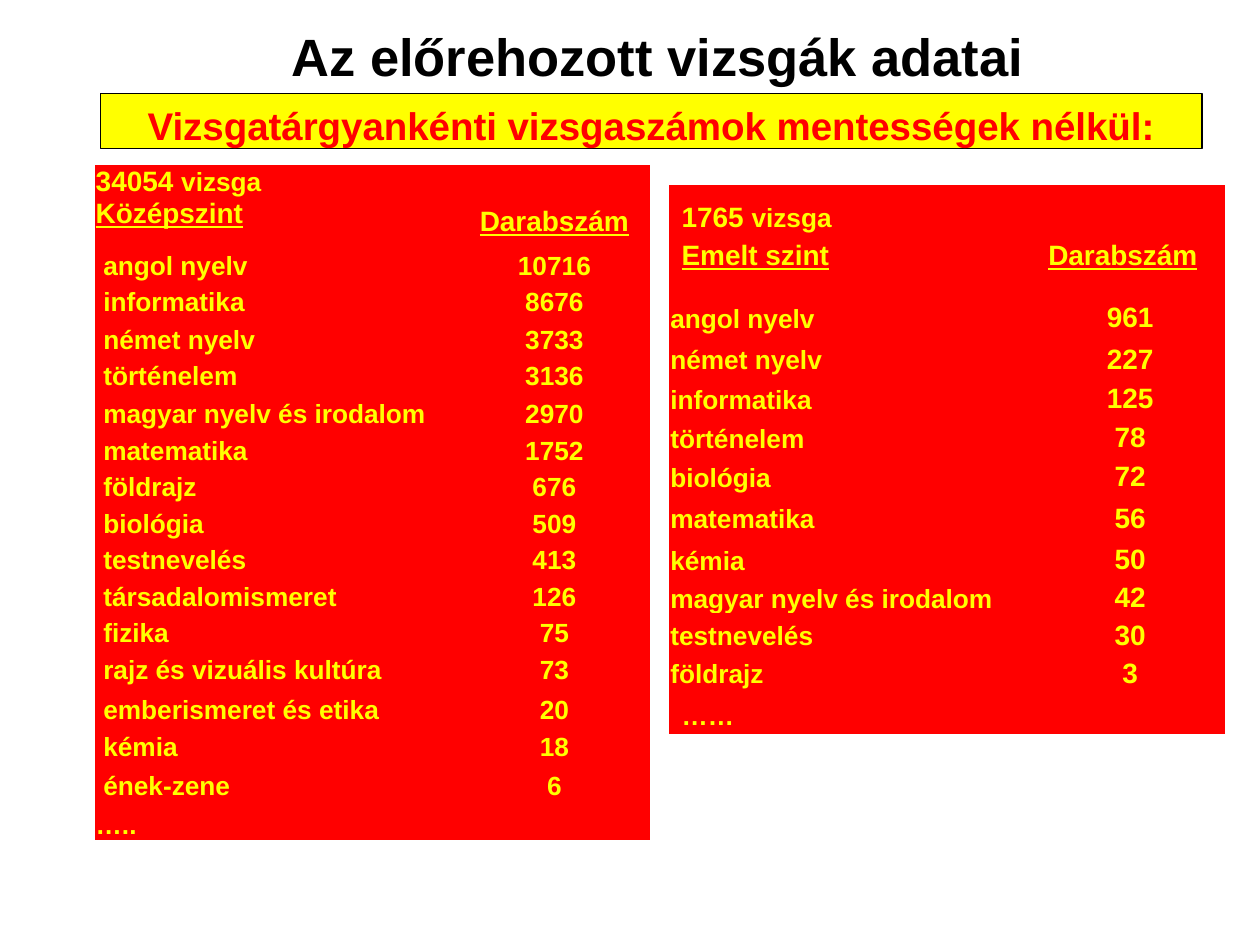
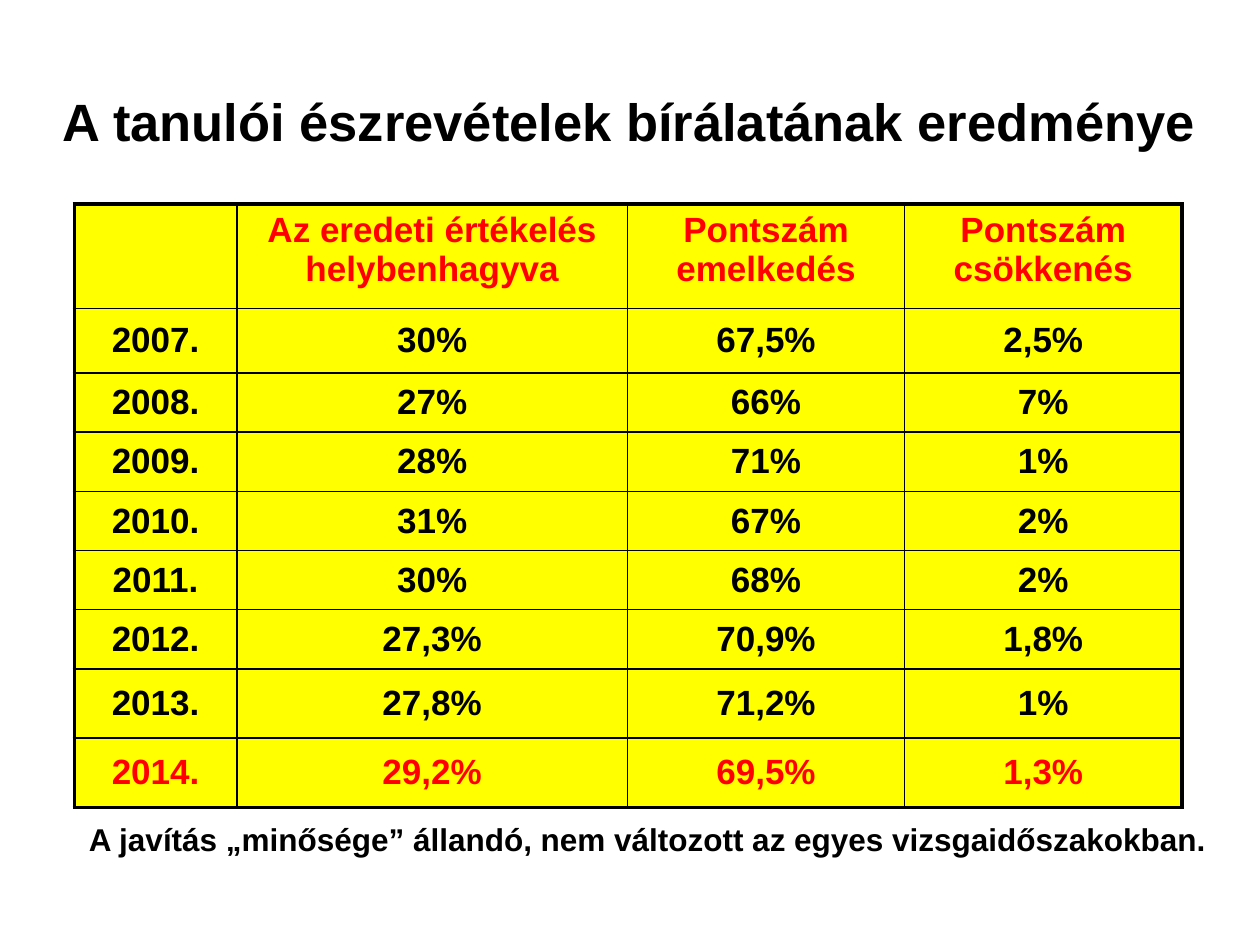
from dataclasses import dataclass

from lxml import etree
from pptx import Presentation
from pptx.dml.color import RGBColor
from pptx.enum.shapes import MSO_SHAPE
from pptx.enum.text import MSO_ANCHOR, MSO_AUTO_SIZE, PP_ALIGN
from pptx.oxml.ns import qn
from pptx.util import Inches, Pt

LEFT, CENTER = PP_ALIGN.LEFT, PP_ALIGN.CENTER
TOP, MIDDLE, BOTTOM = MSO_ANCHOR.TOP, MSO_ANCHOR.MIDDLE, MSO_ANCHOR.BOTTOM
RECTANGLE = MSO_SHAPE.RECTANGLE
NO_AUTOFIT = MSO_AUTO_SIZE.NONE
TITLE_ONLY = 5
PLAIN_TABLE = "{2D5ABB26-0587-4C30-8999-92F81FD0307C}"
GRID_COLS, GRID_ROWS = 100, 75


@dataclass(frozen=True)
class Theme:
    font: str = "Arial"
    black: str = "000000"
    red: str = "FF0000"
    yellow: str = "FFFF00"
    title: int = 30
    band: int = 22
    grid: int = 20
    caption: int = 18
    count: int = 16
    subject: int = 15
    thin: float = 1
    thick: float = 2.25
    outline: float = 0.75


THEME = Theme()
TIGHT = dict(margin_left=Inches(0.01), margin_right=Inches(0.01),
             margin_top=Inches(0.01), margin_bottom=0)
INSET = {**TIGHT, "margin_left": Inches(0.07)}


def apply(target, values):
    for name, value in values.items():
        setattr(target, name, value)


def rgb(color):
    return RGBColor.from_string(color)


class Deck:
    """Builds slides on a grid of 100 columns and 75 rows."""

    def __init__(self, theme):
        self.theme = theme
        self.prs = Presentation()
        self.prs.slide_width, self.prs.slide_height = Inches(10), Inches(7.5)
        self.col = self.prs.slide_width / GRID_COLS
        self.row = self.prs.slide_height / GRID_ROWS
        self.slide = None

    def box(self, left, top, width, height):
        return (round(left * self.col), round(top * self.row),
                round(width * self.col), round(height * self.row))

    def fill_text(self, tf, paragraphs, size, color, **para):
        """Fill a frame; a paragraph is a string or a list of (text, font values)."""
        for i, runs in enumerate(paragraphs):
            p = tf.paragraphs[0] if i == 0 else tf.add_paragraph()
            apply(p, para)
            for text, values in [(runs, {})] if isinstance(runs, str) else runs:
                r = p.add_run()
                r.text = text
                apply(r.font, dict(name=self.theme.font, size=Pt(size), bold=True) | values)
                r.font.color.rgb = rgb(color)

    def add_slide(self, title, at):
        self.slide = self.prs.slides.add_slide(self.prs.slide_layouts[TITLE_ONLY])
        sp = self.slide.shapes.title
        sp.left, sp.top, sp.width, sp.height = self.box(*at)
        apply(sp.text_frame, dict(auto_size=NO_AUTOFIT, vertical_anchor=MIDDLE, word_wrap=True))
        self.fill_text(sp.text_frame, [title], self.theme.title, self.theme.black,
                       alignment=CENTER)

    def band(self, text, at):
        t = self.theme
        sp = self.slide.shapes.add_shape(RECTANGLE, *self.box(*at))
        sp.shadow.inherit = False
        sp.fill.solid()
        sp.fill.fore_color.rgb = rgb(t.yellow)
        sp.line.color.rgb = rgb(t.black)
        sp.line.width = Pt(t.outline)
        apply(sp.text_frame, dict(word_wrap=True, vertical_anchor=TOP, margin_top=Inches(0.07)))
        self.fill_text(sp.text_frame, [text], t.band, t.red, alignment=CENTER)

    def caption(self, text, at):
        tf = self.slide.shapes.add_textbox(*self.box(*at)).text_frame
        tf.word_wrap = True
        self.fill_text(tf, [text], self.theme.caption, self.theme.black,
                       alignment=CENTER, line_spacing=0.9)

    def table(self, left, top, cols, rows, fill):
        """Add an empty table with filled cells and no lines."""
        at = self.box(left, top, sum(cols), sum(rows))
        table = self.slide.shapes.add_table(len(rows), len(cols), *at).table
        table.first_row = table.horz_banding = False
        table._tbl.tblPr.find(qn("a:tableStyleId")).text = PLAIN_TABLE
        for column, width in zip(table.columns, cols):
            column.width = round(width * self.col)
        for row, height in zip(table.rows, rows):
            row.height = round(height * self.row)
        for cell in table.iter_cells():
            cell.fill.solid()
            cell.fill.fore_color.rgb = rgb(fill)
        return table

    def cell(self, cell, paragraphs, size, color, layout, **para):
        apply(cell, layout)
        self.fill_text(cell.text_frame, paragraphs, size, color, **para)

    def subject_rows(self, table, first, subjects, count_size, name_layout):
        t = self.theme
        for i, (name, count) in enumerate(subjects, first):
            self.cell(table.cell(i, 0), [name], t.subject, t.yellow,
                      name_layout | {"vertical_anchor": BOTTOM}, alignment=LEFT)
            self.cell(table.cell(i, 1), [count], count_size, t.yellow,
                      TIGHT | {"vertical_anchor": BOTTOM}, alignment=CENTER)

    def rule_cells(self, table):
        """Thick lines round the table, thin ones inside."""
        last_row, last_col = len(table.rows) - 1, len(table.columns) - 1
        for i in range(last_row + 1):
            for j in range(last_col + 1):
                sides = {"lnL": j == 0, "lnR": j == last_col,
                         "lnT": i == 0, "lnB": i == last_row}
                tc_pr = table.cell(i, j)._tc.get_or_add_tcPr()
                for k, (side, outer) in enumerate(sides.items()):
                    width = Pt(self.theme.thick if outer else self.theme.thin)
                    ln = etree.Element(qn(f"a:{side}"), w=str(int(width)))
                    solid = etree.SubElement(ln, qn("a:solidFill"))
                    etree.SubElement(solid, qn("a:srgbClr"), val=self.theme.black)
                    tc_pr.insert(k, ln)


INTERMEDIATE = [
    ("angol nyelv", "10716"), ("informatika", "8676"), ("német nyelv", "3733"),
    ("történelem", "3136"), ("magyar nyelv és irodalom", "2970"),
    ("matematika", "1752"), ("földrajz", "676"), ("biológia", "509"),
    ("testnevelés", "413"), ("társadalomismeret", "126"), ("fizika", "75"),
    ("rajz és vizuális kultúra", "73"), ("emberismeret és etika", "20"),
    ("kémia", "18"), ("ének-zene", "6"),
]
ADVANCED = [
    ("angol nyelv", "961"), ("német nyelv", "227"), ("informatika", "125"),
    ("történelem", "78"), ("biológia", "72"), ("matematika", "56"), ("kémia", "50"),
    ("magyar nyelv és irodalom", "42"), ("testnevelés", "30"), ("földrajz", "3"),
]
REVIEWS = [
    ("", "Az eredeti értékelés helybenhagyva", "Pontszám emelkedés", "Pontszám csökkenés"),
    ("2007.", "30%", "67,5%", "2,5%"),
    ("2008.", "27%", "66%", "7%"),
    ("2009.", "28%", "71%", "1%"),
    ("2010.", "31%", "67%", "2%"),
    ("2011.", "30%", "68%", "2%"),
    ("2012.", "27,3%", "70,9%", "1,8%"),
    ("2013.", "27,8%", "71,2%", "1%"),
    ("2014.", "29,2%", "69,5%", "1,3%"),
]


def advanced_table(deck):
    t = deck.theme
    rows = [7.2, 4.6, 3.3, 3.1, 3.1, 3.1, 3.3, 3.3, 3, 3, 3, 3.6]
    table = deck.table(53.1, 14.7, [29.1, 15], rows, t.red)
    underlined, bottom = {"underline": True}, {"vertical_anchor": BOTTOM}
    head = [[("1765 ", {}), ("vizsga", {"size": Pt(t.subject)})],
            [("Emelt szint", underlined)]]
    deck.cell(table.cell(0, 0), head, t.count, t.yellow, bottom, line_spacing=0.6)
    table.cell(0, 0).text_frame.paragraphs[1].space_before = Pt(11)
    deck.cell(table.cell(0, 1), [[("Darabszám", underlined)]], t.count, t.yellow,
              bottom, line_spacing=0.6)
    deck.subject_rows(table, 1, ADVANCED, t.count, TIGHT)
    deck.cell(table.cell(11, 0), ["……"], t.subject, t.yellow, bottom, line_spacing=0.45)
    apply(table.cell(11, 1), TIGHT)


def intermediate_table(deck):
    t = deck.theme
    rows = [2.4, 3.2, 3.4, 2.9, 3, 2.9, 3] + [2.9] * 7 + [3.2, 2.9, 3.1, 3.1]
    table = deck.table(7.5, 13.1, [28.9, 15.2], rows, t.red)
    table.cell(0, 1).merge(table.cell(1, 1))
    underlined, bottom = {"underline": True}, TIGHT | {"vertical_anchor": BOTTOM}
    deck.cell(table.cell(0, 0), [[("34054 ", {}), ("vizsga", {"size": Pt(t.subject)})]],
              t.count, t.yellow, TIGHT)
    deck.cell(table.cell(1, 0), [[("Középszint", underlined)]], t.count, t.yellow, TIGHT)
    deck.cell(table.cell(0, 1), [[("Darabszám", underlined)]], t.count, t.yellow,
              bottom, alignment=CENTER)
    deck.subject_rows(table, 2, INTERMEDIATE, t.subject, INSET)
    deck.cell(table.cell(17, 0), ["….."], t.subject, t.yellow, bottom)
    apply(table.cell(17, 1), TIGHT)


def review_table(deck):
    t = deck.theme
    rows = [8.3, 5.1] + [4.7] * 5 + [5.5] * 2
    table = deck.table(5.9, 16.2, [12.9, 31, 22, 22], rows, t.yellow)
    for i, values in enumerate(REVIEWS):
        color = t.red if i in (0, len(REVIEWS) - 1) else t.black
        layout = {"vertical_anchor": MIDDLE if i else TOP}
        for j, value in enumerate(values):
            if value:
                deck.cell(table.cell(i, j), [value], t.grid, color, layout, alignment=CENTER)
    deck.rule_cells(table)


def main():
    deck = Deck(THEME)

    deck.add_slide("Az előrehozott vizsgák adatai", (13, 0.5, 78.4, 7.8))
    deck.band("Vizsgatárgyankénti vizsgaszámok mentességek nélkül:", (8, 7.4, 87.4, 4.4))
    advanced_table(deck)
    intermediate_table(deck)

    deck.add_slide("A tanulói észrevételek bírálatának eredménye", (2.7, 6, 94.5, 7.1))
    deck.caption("A javítás „minősége” állandó, nem változott az egyes vizsgaidőszakokban.",
                 (2.8, 64.9, 97.2, 3.7))
    review_table(deck)

    deck.prs.save("out.pptx")


if __name__ == "__main__":
    main()
